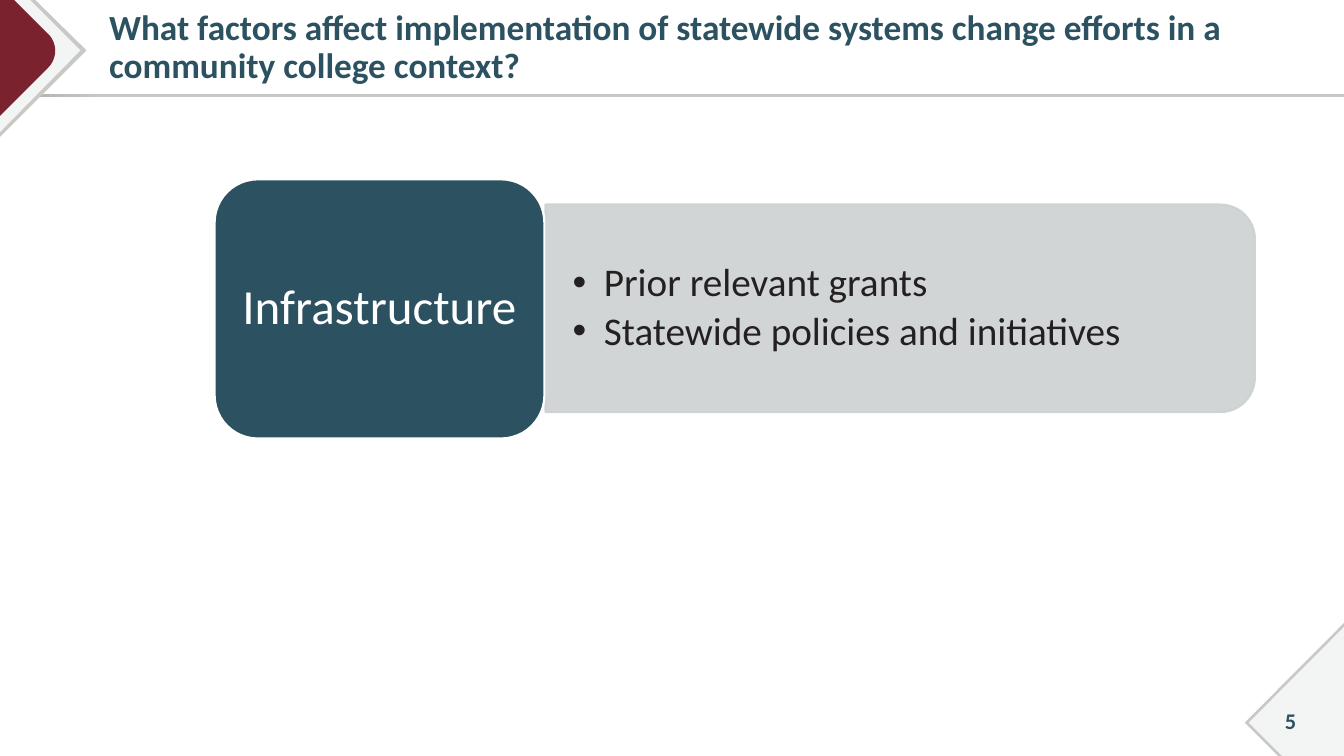
import lxml.etree
import pptx
import pptx.dml.color
import pptx.enum.shapes
import pptx.enum.text
import pptx.oxml.ns
import pptx.util

Cm = pptx.util.Cm
Pt = pptx.util.Pt
Shapes = pptx.enum.shapes.MSO_SHAPE
Align = pptx.enum.text.PP_ALIGN

WIDTH, HEIGHT = 33.87, 19.05
TEAL, RED, INK, WHITE = "2C5261", "7A232F", "242021", "FFFFFF"
EDGE, PALE, BAR = "C8C8C6", "F3F4F4", "CDD1D2"


def color(hex_value):
    """Return the RGB colour of a hex string."""
    return pptx.dml.color.RGBColor.from_string(hex_value)


def add_xml(parent, tag, **attributes):
    """Append a DrawingML element with the given attributes."""
    return lxml.etree.SubElement(parent, pptx.oxml.ns.qn(tag), attributes)


def paint(shape, fill, line=None, alpha=None):
    """Set the fill, outline and opacity of a shape."""
    shape.shadow.inherit = False
    shape.fill.solid()
    shape.fill.fore_color.rgb = color(fill)
    if line:
        shape.line.color.rgb = color(line)
        shape.line.width = Pt(1.5)
    else:
        shape.line.fill.background()
    if alpha:
        for node in shape.element.spPr.iter(pptx.oxml.ns.qn("a:srgbClr")):
            add_xml(node, "a:alpha", val=str(alpha * 1000))


def add_block(slide, kind, box, rotation=0):
    """Add a preset shape at a box given in centimetres."""
    shape = slide.shapes.add_shape(kind, *map(Cm, box))
    shape.rotation = rotation
    return shape


def add_outline(slide, points, fill):
    """Add a filled polygon through points given in centimetres."""
    corners = [(Cm(x), Cm(y)) for x, y in points]
    builder = slide.shapes.build_freeform(*corners[0])
    builder.add_line_segments(corners[1:], close=True)
    paint(builder.convert_to_shape(), fill)


def curve(start, first, second, end, steps=12):
    """Return points along a cubic curve."""
    points = []
    for step in range(steps + 1):
        t = step / steps
        weights = ((1 - t) ** 3, 3 * t * (1 - t) ** 2, 3 * t * t * (1 - t), t ** 3)
        points.append(tuple(sum(w * p[axis] for w, p in zip(weights, (start, first, second, end)))
                            for axis in (0, 1)))
    return points


def write(shape, text, size, ink, bold=False, align=Align.LEFT, spacing=None,
          after=0, insets=(0.25, 0.13, 0.25, 0.13), bullet=False):
    """Write the lines of a text into a shape as formatted paragraphs."""
    frame = shape.text_frame
    frame.word_wrap = True
    frame.vertical_anchor = pptx.enum.text.MSO_ANCHOR.MIDDLE
    frame.margin_left, frame.margin_top, frame.margin_right, frame.margin_bottom = map(Cm, insets)
    frame.text = text
    for paragraph in frame.paragraphs:
        paragraph.alignment = align
        paragraph.line_spacing = spacing
        paragraph.space_after = Pt(after)
        if bullet:
            properties = paragraph._p.get_or_add_pPr()
            properties.set("marL", str(Cm(0.79)))
            properties.set("indent", str(-Cm(0.79)))
            add_xml(properties, "a:buFont", typeface="Arial")
            add_xml(properties, "a:buChar", char="•")
        font = paragraph.font
        font.name, font.size, font.bold = "Calibri", Pt(size), bold
        font.color.rgb = color(ink)


def add_text(slide, box, text, **formats):
    """Add a text box at a box given in centimetres."""
    write(slide.shapes.add_textbox(*map(Cm, box)), text, **formats)


def add_rule(slide):
    """Add the shaded rule below the title."""
    rule = add_block(slide, Shapes.RECTANGLE, (0, 2.36, WIDTH, 0.08))
    paint(rule, EDGE)
    rule.fill.gradient()
    rule.fill.gradient_angle = 0
    for stop, position, shade in zip(rule.fill.gradient_stops, (0, 0.08), ("ABABA8", EDGE)):
        stop.position = position
        stop.color.rgb = color(shade)


def add_corners(slide):
    """Add the layered diamonds in the two slide corners."""
    add_outline(slide, [(0, 0), (0.89, 0), (2.18, 1.27), (0, 3.45)], EDGE)
    add_outline(slide, [(0, 0), (0.76, 0), (2.03, 1.27), (0, 3.33)], PALE)
    tip = curve((1.22, 0.86), (1.45, 1.09), (1.45, 1.47), (1.22, 1.7))
    add_outline(slide, [(0, 0), (0.36, 0), *tip, (0, 2.92)], RED)
    for shift, fill in ((0, EDGE), (0.1, PALE)):
        add_outline(slide, [(WIDTH, 15.7 + shift), (WIDTH, HEIGHT),
                            (32.21 + shift, HEIGHT), (31.37 + shift, 18.21)], fill)


def add_factor(slide, name, details):
    """Add a factor block with its bar of details."""
    bar = add_block(slide, Shapes.ROUND_2_SAME_RECTANGLE, (20.07, -1.17, 5.23, 17.88), 90)
    paint(bar, BAR, BAR, alpha=90)
    add_text(slide, (13.74, 5.41, 17.63, 4.72), details, size=28, ink=INK, spacing=0.9,
             after=4.2, insets=(0.69, 0.36, 0.69, 0.36), bullet=True)
    block = add_block(slide, Shapes.ROUNDED_RECTANGLE, (5.41, 4.52, 8.31, 6.53))
    paint(block, TEAL, WHITE)
    write(block, name, size=35, ink=WHITE, align=Align.CENTER, spacing=0.9,
          insets=(0, 0.13, 0, 0.13))


def main():
    """Build the slide and save it."""
    presentation = pptx.Presentation()
    presentation.slide_width, presentation.slide_height = Cm(WIDTH), Cm(HEIGHT)
    slide = presentation.slides.add_slide(presentation.slide_layouts[6])
    add_rule(slide)
    add_corners(slide)
    add_text(slide, (2.24, 0.13, 30.78, 2.18),
             "What factors affect implementation of statewide systems change efforts "
             "in a community college context?",
             size=25.2, ink=TEAL, bold=True, spacing=0.9, insets=(0.51, 0.13, 0.25, 0.13))
    add_factor(slide, "Infrastructure", "Prior relevant grants\nStatewide policies and initiatives")
    add_text(slide, (31.62, 17.65, 1.8, 1.02), "5", size=16, ink=TEAL, bold=True,
             align=Align.CENTER)
    presentation.save("out.pptx")


if __name__ == "__main__":
    main()
